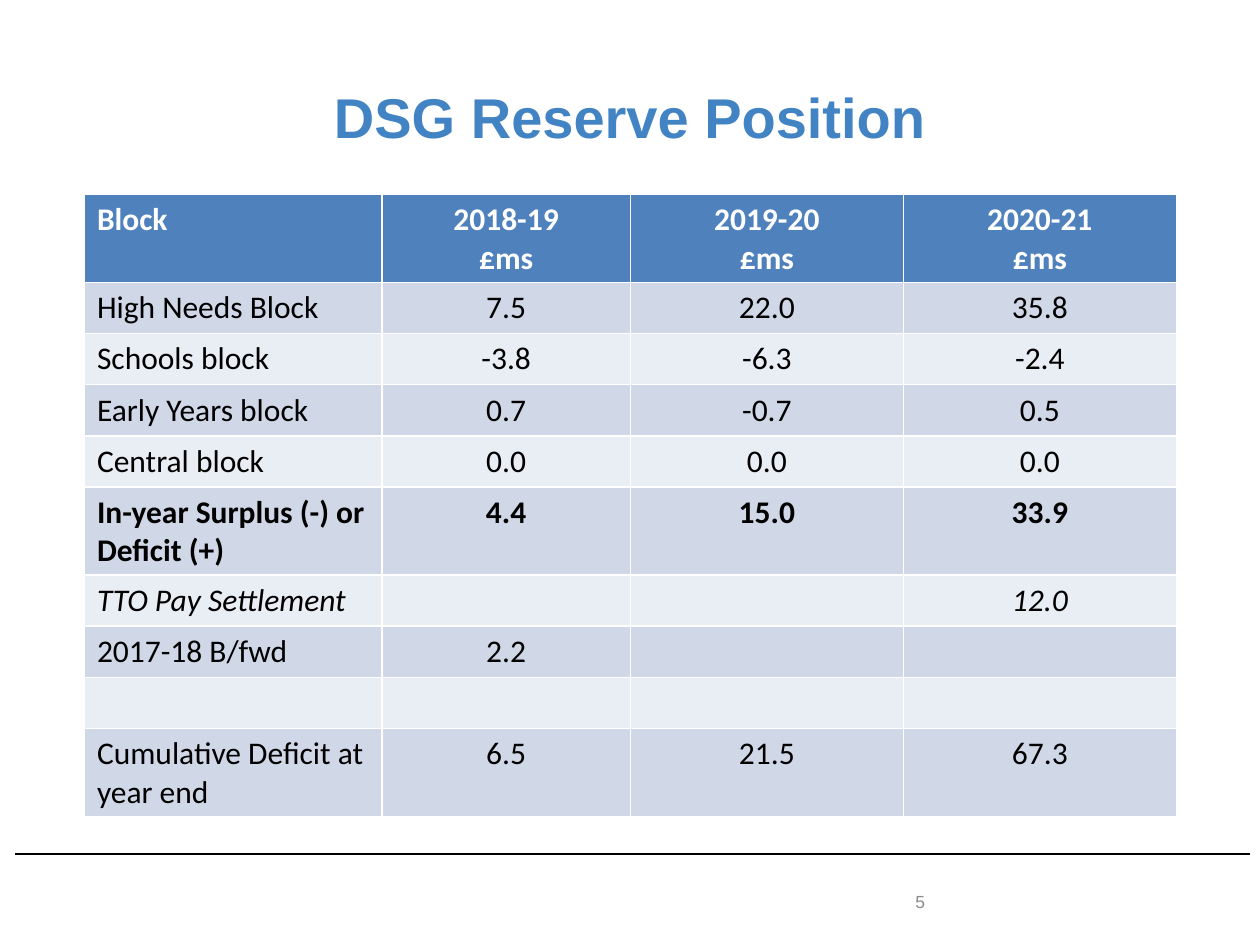
"""Build the DSG Reserve Position slide."""
from dataclasses import dataclass

from lxml import etree
from pptx import Presentation
from pptx.dml.color import RGBColor
from pptx.enum.shapes import MSO_CONNECTOR
from pptx.enum.text import MSO_ANCHOR, PP_ALIGN
from pptx.oxml.ns import qn
from pptx.util import Pt

LEFT, CENTER = PP_ALIGN.LEFT, PP_ALIGN.CENTER
MIDDLE = MSO_ANCHOR.MIDDLE
STRAIGHT = MSO_CONNECTOR.STRAIGHT

TITLE = "DSG Reserve Position"
PAGE_NUMBER = "5"
YEARS = ["2018-19", "2019-20", "2020-21"]
UNIT = "£ms"
HEADER = ["Block"] + [f"{year}\n{UNIT}" for year in YEARS]
ROWS = [
    ["High Needs Block", "7.5", "22.0", "35.8"],
    ["Schools block", "-3.8", "-6.3", "-2.4"],
    ["Early Years block", "0.7", "-0.7", "0.5"],
    ["Central block", "0.0", "0.0", "0.0"],
    ["In-year Surplus (-) or Deficit (+)", "4.4", "15.0", "33.9"],
    ["TTO Pay Settlement", "", "", "12.0"],
    ["2017-18 B/fwd", "2.2", "", ""],
    ["", "", "", ""],
    ["Cumulative Deficit at year end", "6.5", "21.5", "67.3"],
]
BOLD_ROWS = {0, 5}
ITALIC_ROWS = {6}
TALL_ROWS = {0, 5, 9}
COLUMN_WIDTHS = [170, 142, 156, 156]
ROW_HEIGHT, TALL_HEIGHT = 29.2, 50.4


@dataclass(frozen=True)
class Theme:
    """Colours, fonts and type sizes."""

    title: RGBColor = RGBColor(0x42, 0x83, 0xC4)
    number: RGBColor = RGBColor(0x8C, 0x8C, 0x8C)
    header: RGBColor = RGBColor(0x4F, 0x81, 0xBD)
    bands: tuple = (RGBColor(0xE9, 0xED, 0xF4), RGBColor(0xD0, 0xD8, 0xE8))
    white: RGBColor = RGBColor(0xFF, 0xFF, 0xFF)
    black: RGBColor = RGBColor(0, 0, 0)
    heading_font: str = "Arial"
    table_font: str = "Calibri"
    title_size: int = 32
    table_size: int = 18
    number_size: int = 10


THEME = Theme()


def style(p, name, size, color, align=LEFT, bold=False, italic=False):
    """Set the font and alignment of a paragraph."""
    p.alignment = align
    p.font.name, p.font.size = name, Pt(size)
    p.font.color.rgb = color
    p.font.bold, p.font.italic = bold, italic


def add_text(s, text, box, size, color, **options):
    """Add a vertically centred text box."""
    tf = s.shapes.add_textbox(*map(Pt, box)).text_frame
    tf.word_wrap, tf.vertical_anchor = True, MIDDLE
    tf.text = text
    style(tf.paragraphs[0], THEME.heading_font, size, color, **options)


def add_rule(s):
    """Add the footer line."""
    sp = s.shapes.add_connector(STRAIGHT, Pt(8.64), Pt(488), Pt(714.24), Pt(488))
    sp.line.color.rgb, sp.line.width = THEME.black, Pt(1)
    etree.SubElement(sp._element.spPr, qn("a:effectLst"))


def add_reserve_table(s):
    """Add the reserve table with its banded rows."""
    data = [HEADER] + ROWS
    heights = [TALL_HEIGHT if i in TALL_ROWS else ROW_HEIGHT for i in range(len(data))]
    box = (48.24, 111, sum(COLUMN_WIDTHS), sum(heights))
    table = s.shapes.add_table(len(data), len(HEADER), *map(Pt, box)).table
    for column, width in zip(table.columns, COLUMN_WIDTHS):
        column.width = Pt(width)
    for i, values in enumerate(data):
        table.rows[i].height = Pt(heights[i])
        fill = THEME.bands[i % 2] if i else THEME.header
        color = THEME.black if i else THEME.white
        for j, value in enumerate(values):
            cell = table.cell(i, j)
            cell.fill.solid()
            cell.fill.fore_color.rgb = fill
            cell.text = value
            for p in cell.text_frame.paragraphs:
                style(p, THEME.table_font, THEME.table_size, color,
                      CENTER if j else LEFT, i in BOLD_ROWS, i in ITALIC_ROWS)


def main():
    """Build and save the presentation."""
    prs = Presentation()
    prs.slide_width, prs.slide_height = Pt(720), Pt(540)
    s = prs.slides.add_slide(prs.slide_layouts[6])
    add_rule(s)
    add_text(s, TITLE, (36, 21.6, 648, 90), THEME.title_size, THEME.title,
             align=CENTER, bold=True)
    add_text(s, PAGE_NUMBER, (516, 500.5, 168, 28.8), THEME.number_size, THEME.number)
    add_reserve_table(s)
    prs.save("out.pptx")


if __name__ == "__main__":
    main()
